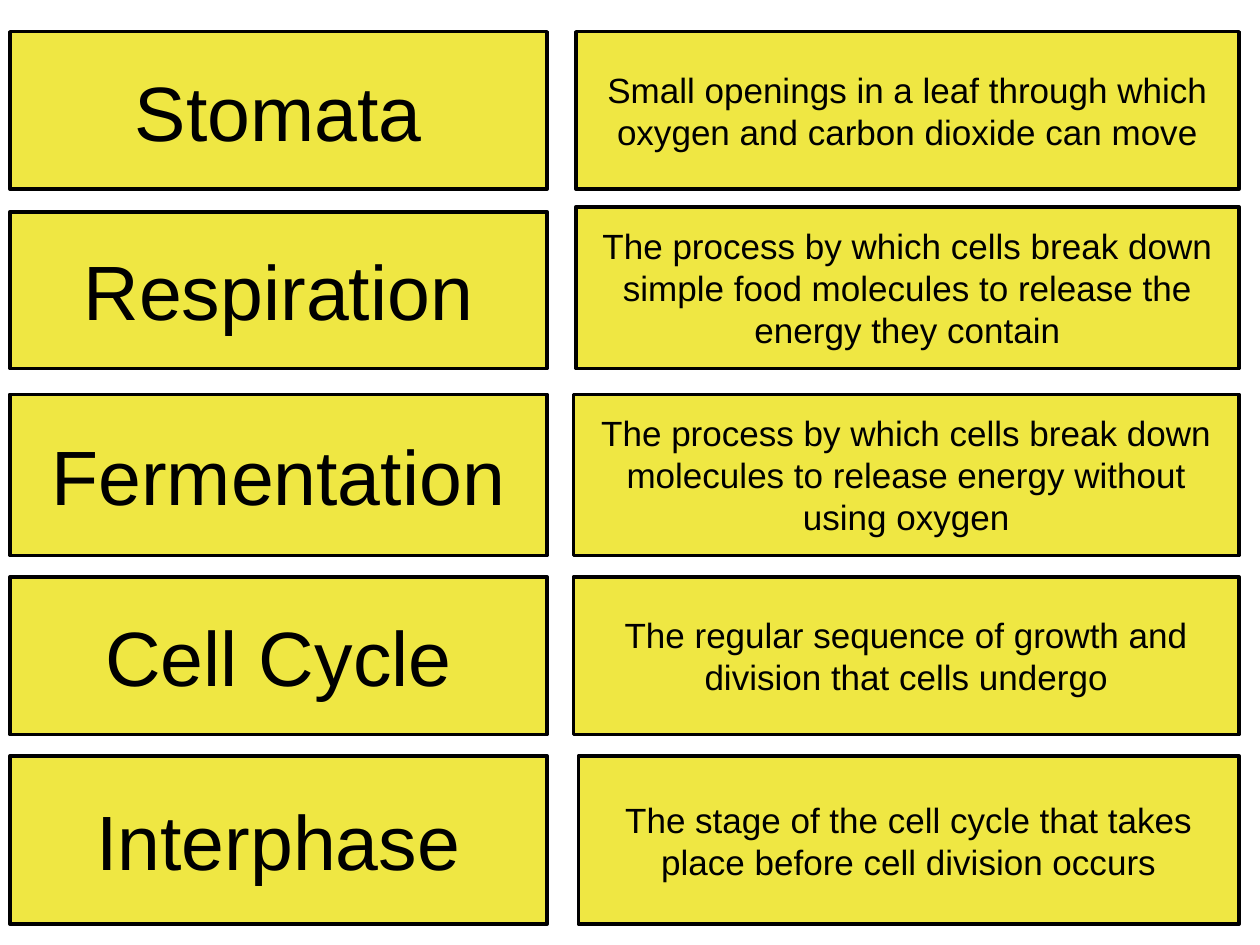
from pptx import Presentation
from pptx.dml.color import RGBColor
from pptx.enum.shapes import MSO_SHAPE as Shape
from pptx.enum.text import MSO_ANCHOR as Anchor, PP_ALIGN as Align
from pptx.util import Cm, Pt

YELLOW = RGBColor(0xEF, 0xE7, 0x43)
BLACK = RGBColor(0, 0, 0)

# term, definition, row top, row bottom, definition left, definition top (cm)
GLOSSARY = [
    ("Stomata",
     "Small openings in a leaf through which oxygen and carbon dioxide can move",
     0.64, 3.81, 11.61, 0.64),
    ("Respiration",
     "The process by which cells break down simple food molecules "
     "to release the energy they contain",
     4.27, 7.43, 11.61, 4.17),
    ("Fermentation",
     "The process by which cells break down molecules "
     "to release energy without using oxygen",
     7.95, 11.2, 11.56, 7.95),
    ("Cell Cycle",
     "The regular sequence of growth and division that cells undergo",
     11.63, 14.81, 11.56, 11.63),
    ("Interphase",
     "The stage of the cell cycle that takes place before cell division occurs",
     15.24, 18.63, 11.66, 15.24),
]
TERM_LEFT, TERM_RIGHT, DEFINITION_RIGHT = 0.2, 11.03, 24.98
TERM_FONT = {"name": "Arial", "size": Pt(44), "bold": False}
DEFINITION_FONT = {**TERM_FONT, "size": Pt(20)}
FRAME_FORMAT = {"word_wrap": True, "vertical_anchor": Anchor.MIDDLE}


def add_card(slide, wording, left, top, right, bottom, font_format):
    """Add a yellow box with centred text; edges are in centimetres."""
    card = slide.shapes.add_shape(
        Shape.FLOWCHART_PROCESS,
        Cm(left), Cm(top), Cm(right - left), Cm(bottom - top))
    card.shadow.inherit = False
    card.fill.solid()
    card.fill.fore_color.rgb = YELLOW
    card.line.color.rgb = BLACK
    card.line.width = Pt(2)

    frame = card.text_frame
    for key, value in FRAME_FORMAT.items():
        setattr(frame, key, value)
    paragraph = frame.paragraphs[0]
    paragraph.alignment = Align.CENTER
    run = paragraph.add_run()
    run.text = wording
    for key, value in font_format.items():
        setattr(run.font, key, value)
    run.font.color.rgb = BLACK


def main():
    deck = Presentation()
    deck.slide_width, deck.slide_height = Cm(25.4), Cm(19.05)
    slide = deck.slides.add_slide(deck.slide_layouts[6])
    for term, definition, top, bottom, definition_left, definition_top in GLOSSARY:
        add_card(slide, term, TERM_LEFT, top, TERM_RIGHT, bottom, TERM_FONT)
        add_card(slide, definition, definition_left, definition_top,
                 DEFINITION_RIGHT, bottom, DEFINITION_FONT)
    deck.save("out.pptx")


if __name__ == "__main__":
    main()
